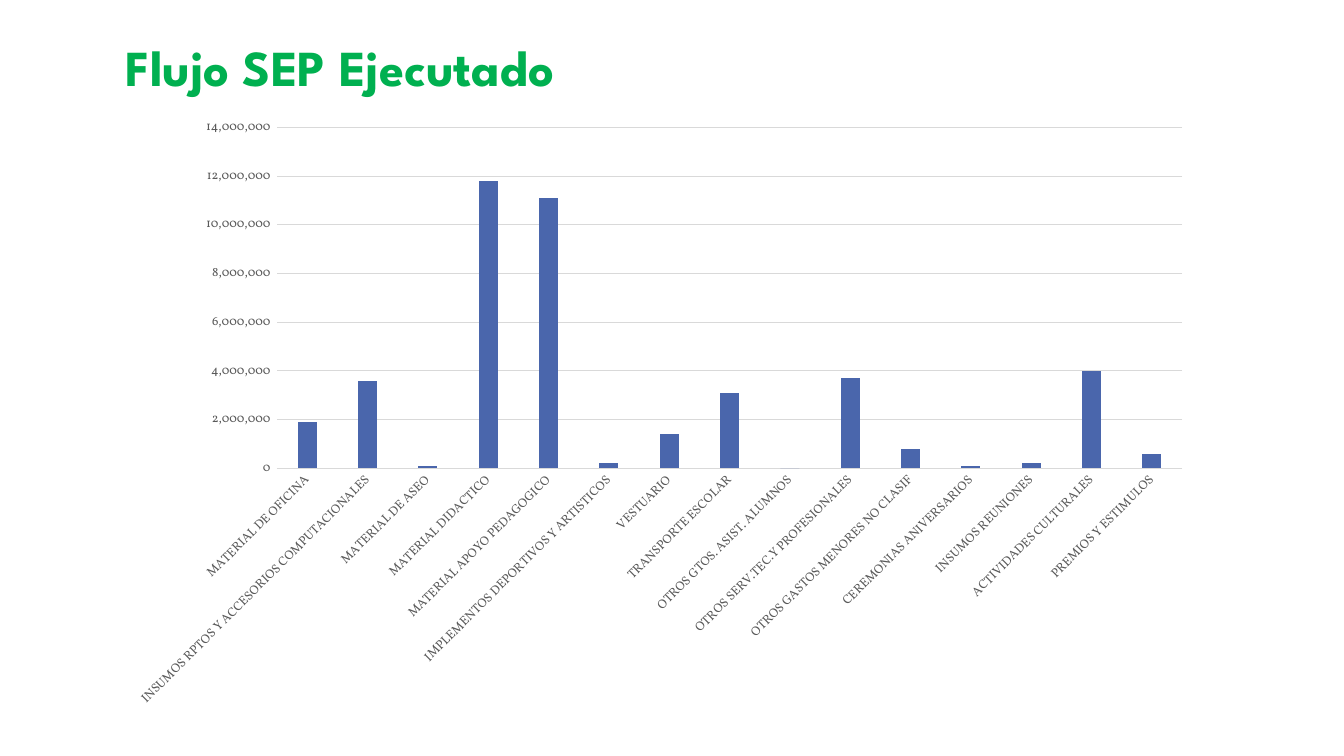
from pptx import Presentation
from pptx.chart.data import CategoryChartData
from pptx.dml.color import RGBColor
from pptx.enum.chart import XL_CHART_TYPE, XL_TICK_MARK
from pptx.enum.text import MSO_ANCHOR
from pptx.util import Inches, Pt

COLUMN_CLUSTERED = XL_CHART_TYPE.COLUMN_CLUSTERED
NO_TICK = XL_TICK_MARK.NONE
ANCHOR_BOTTOM = MSO_ANCHOR.BOTTOM

GREEN = RGBColor(0x00, 0xB0, 0x50)
BLUE = RGBColor(0x4A, 0x66, 0xAC)
BLACK = RGBColor(0x00, 0x00, 0x00)
LABEL_GRAY = RGBColor(0x59, 0x59, 0x59)
LINE_GRAY = RGBColor(0xD9, 0xD9, 0xD9)
TITLE_FONT = "League Spartan"
CHART_FONT = "Vollkorn"

EXPENSES = {
    "MATERIAL DE OFICINA": 1900000,
    "INSUMOS RPTOS Y ACCESORIOS COMPUTACIONALES": 3600000,
    "MATERIAL DE ASEO": 100000,
    "MATERIAL DIDACTICO": 11800000,
    "MATERIAL APOYO PEDAGOGICO": 11100000,
    "IMPLEMENTOS DEPORTIVOS Y ARTISTICOS": 200000,
    "VESTUARIO": 1400000,
    "TRANSPORTE ESCOLAR": 3100000,
    "OTROS GTOS. ASIST. ALUMNOS": 0,
    "OTROS SERV.TEC.Y PROFESIONALES": 3700000,
    "OTROS GASTOS MENORES NO CLASIF": 800000,
    "CEREMONIAS ANIVERSARIOS": 100000,
    "INSUMOS REUNIONES": 200000,
    "ACTIVIDADES CULTURALES": 4000000,
    "PREMIOS Y ESTIMULOS": 600000,
}


def style_font(font, name, size, color):
    font.name = name
    font.size = Pt(size)
    font.color.rgb = color


def style_line(line):
    line.color.rgb = LINE_GRAY
    line.width = Pt(0.75)


def add_title(slide, left, top, width, height):
    title = slide.shapes.add_textbox(left, top, width, height)
    frame = title.text_frame
    frame.word_wrap = True
    frame.vertical_anchor = ANCHOR_BOTTOM
    paragraph = frame.paragraphs[0]
    paragraph.text = "Flujo SEP Ejecutado"
    paragraph.line_spacing = 0.8
    style_font(paragraph.font, TITLE_FONT, 36, GREEN)
    paragraph.font.bold = True


def add_expense_chart(slide, left, top, width, height):
    data = CategoryChartData(number_format="#,##0")
    data.categories = list(EXPENSES)
    data.add_series("Series 1", list(EXPENSES.values()))
    chart = slide.shapes.add_chart(
        COLUMN_CLUSTERED, left, top, width, height, data).chart
    chart.has_title = False
    chart.has_legend = False
    style_font(chart.font, CHART_FONT, 10, BLACK)

    # Columns
    plot = chart.plots[0]
    plot.gap_width = 219
    plot.overlap = -27
    plot.vary_by_categories = False
    fill = plot.series[0].format.fill
    fill.solid()
    fill.fore_color.rgb = BLUE

    # Both axes
    for axis in (chart.category_axis, chart.value_axis):
        axis.major_tick_mark = NO_TICK
        axis.minor_tick_mark = NO_TICK
        style_font(axis.tick_labels.font, CHART_FONT, 9, LABEL_GRAY)

    # Category axis with labels slanted by 45 degrees
    style_line(chart.category_axis.format.line)
    label_body = chart.category_axis._element.txPr.bodyPr
    label_body.set("rot", "-2700000")
    label_body.set("vert", "horz")

    # Value axis and gridlines
    value_axis = chart.value_axis
    value_axis.minimum_scale = 0
    value_axis.maximum_scale = 14000000
    value_axis.major_unit = 2000000
    value_axis.format.line.fill.background()
    value_axis.has_major_gridlines = True
    style_line(value_axis.major_gridlines.format.line)
    value_axis.tick_labels.number_format = r"#,##0_);\(#,##0\)"
    value_axis.tick_labels.number_format_is_linked = False


def main():
    presentation = Presentation()
    presentation.slide_width = Inches(13.33)
    presentation.slide_height = Inches(7.5)
    slide = presentation.slides.add_slide(presentation.slide_layouts[6])
    left, width = Inches(1.15), Inches(10.79)
    add_title(slide, left, Inches(0.21), width, Inches(0.79))
    add_expense_chart(slide, left, Inches(1.06), width, Inches(6.08))
    presentation.save("out.pptx")


if __name__ == "__main__":
    main()
